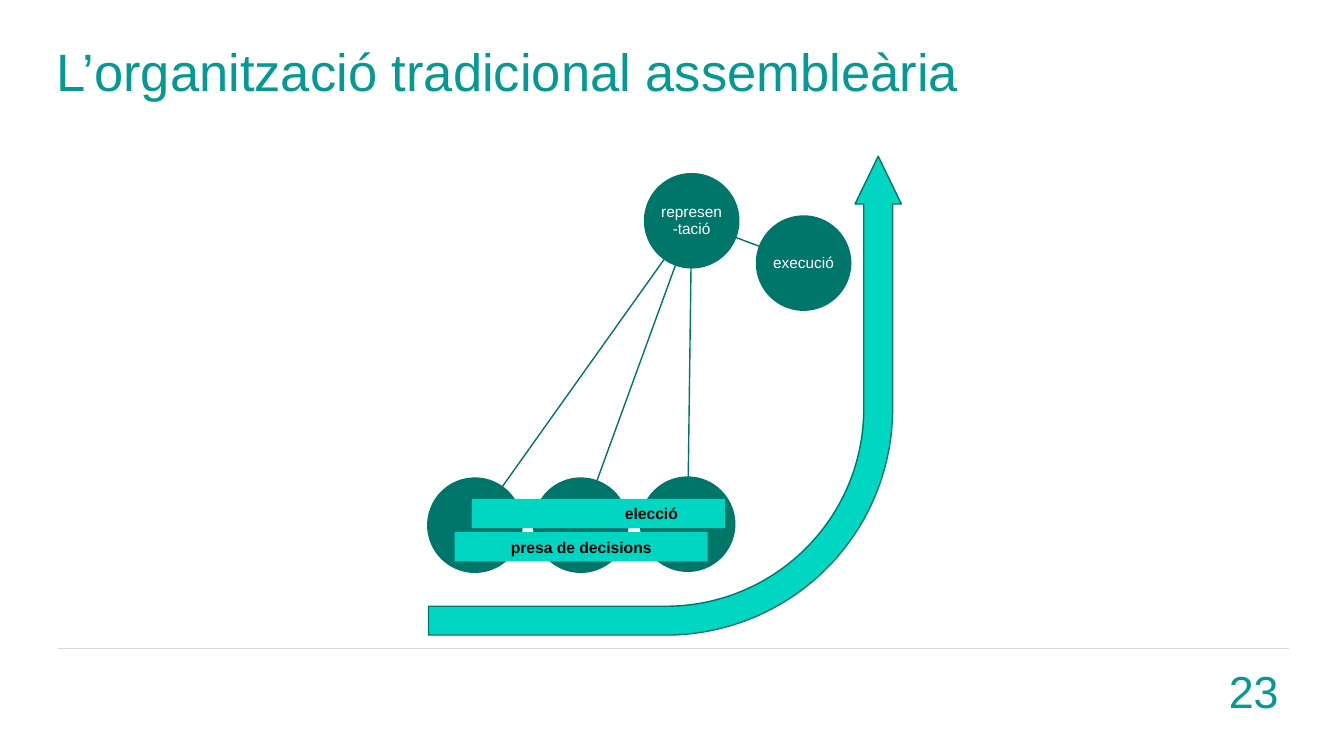
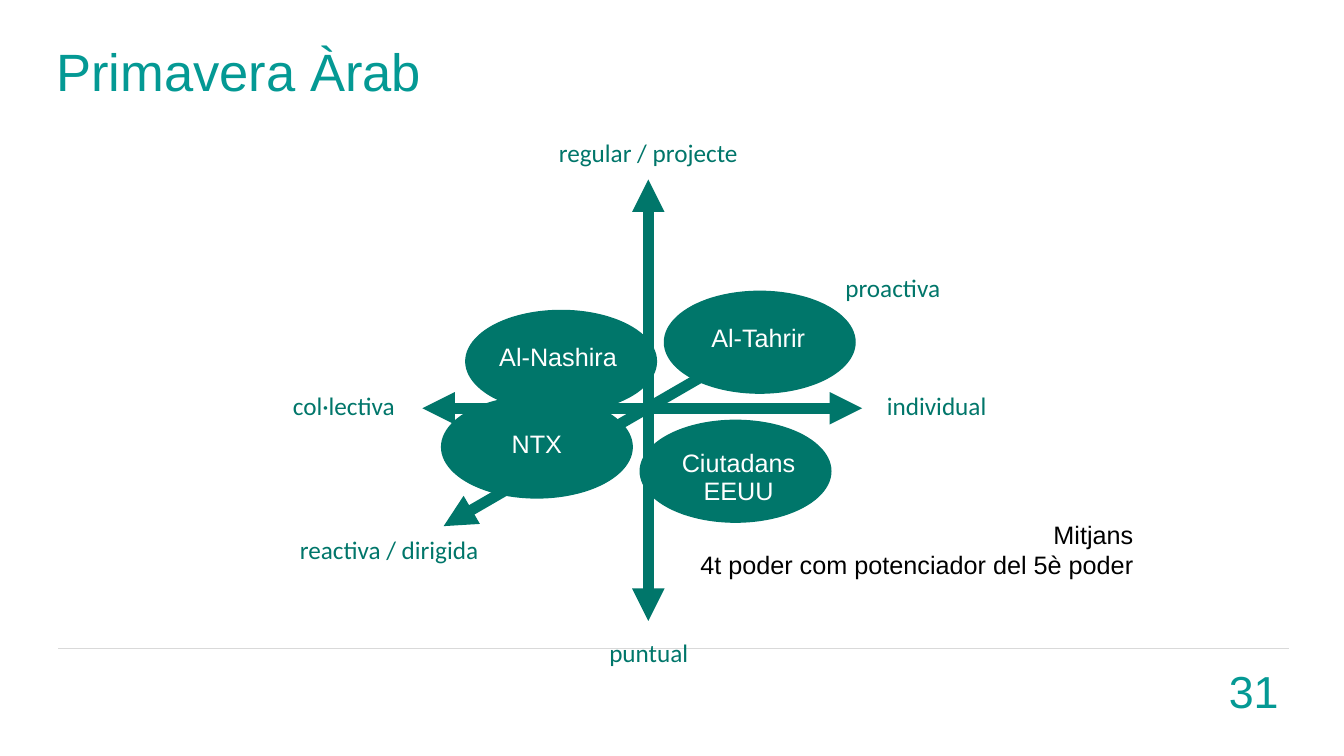
from math import hypot

from lxml.etree import SubElement
from pptx import Presentation
from pptx.dml.color import RGBColor
from pptx.enum.shapes import MSO_CONNECTOR, MSO_SHAPE
from pptx.enum.text import MSO_ANCHOR, PP_ALIGN
from pptx.oxml.ns import qn
from pptx.util import Emu, Pt

PX = 9144
BLACK = RGBColor(0x00, 0x00, 0x00)
WHITE = RGBColor(0xFF, 0xFF, 0xFF)
TEAL = RGBColor(0x04, 0x99, 0x94)
DARK = RGBColor(0x00, 0x76, 0x6A)
BRIGHT = RGBColor(0x00, 0xD6, 0xC2)
RULE = RGBColor(0xD9, 0xD9, 0xD9)

TITLE = {"name": "Arial", "size": Pt(37.5), "color": TEAL}
NUMBER = {"name": "Arial", "size": Pt(32), "color": TEAL}
ROLE = {"name": "Arial", "size": Pt(11), "color": WHITE}
BAR = {"name": "Arial", "size": Pt(11.2), "color": BLACK, "bold": True}
AXIS = {"name": "Calibri", "size": Pt(18), "color": DARK}
ACTOR = {"name": "Arial", "size": Pt(18), "color": WHITE}
NOTE = {"name": "Arial", "size": Pt(18), "color": BLACK}

DEFAULT_INSETS = (10, 5, 10, 5)
NO_INSETS = (0, 0, 0, 0)


def px(*lengths):
    return [Emu(round(length * PX)) for length in lengths]


class Slides:
    def __init__(self):
        self.deck = Presentation()
        self.deck.slide_width, self.deck.slide_height = px(1333, 750)
        self.page = None

    def start(self, title, number):
        self.page = self.deck.slides.add_slide(self.deck.slide_layouts[6])
        self.line((58, 643), (1278, 643), RULE, 0.5)
        self.text((46, 44, 1200, 59), [title], TITLE, align=PP_ALIGN.LEFT,
                  anchor=MSO_ANCHOR.MIDDLE, spacing=0.9)
        self.text((930, 665, 348, 40), [str(number)], NUMBER,
                  align=PP_ALIGN.RIGHT, anchor=MSO_ANCHOR.MIDDLE)

    def set_text(self, shape, lines, style, align=PP_ALIGN.CENTER,
                 anchor=MSO_ANCHOR.TOP, insets=DEFAULT_INSETS, spacing=1.0):
        frame = shape.text_frame
        frame.word_wrap = True
        frame.vertical_anchor = anchor
        for side, inset in zip(("left", "top", "right", "bottom"), px(*insets)):
            setattr(frame, f"margin_{side}", inset)
        for index, line in enumerate(lines):
            para = frame.add_paragraph() if index else frame.paragraphs[0]
            para.text = line
            para.alignment = align
            para.line_spacing = spacing
            for span in para.runs:
                for key, value in style.items():
                    if key == "color":
                        span.font.color.rgb = value
                    else:
                        setattr(span.font, key, value)

    def text(self, place, lines, style, **layout):
        box = self.page.shapes.add_textbox(*px(*place))
        self.set_text(box, lines, style, **layout)

    def shape(self, kind, place, fill, outline=None, width=1):
        shape = self.page.shapes.add_shape(kind, *px(*place))
        shape.shadow.inherit = False
        shape.fill.solid()
        shape.fill.fore_color.rgb = fill
        if outline is None:
            shape.line.fill.background()
        else:
            shape.line.color.rgb = outline
            shape.line.width = Pt(width)
        return shape

    def ellipse(self, place, label, style, width=1, insets=NO_INSETS):
        ellipse = self.shape(MSO_SHAPE.OVAL, place, DARK, DARK, width)
        if label:
            self.set_text(ellipse, [label], style, anchor=MSO_ANCHOR.MIDDLE,
                          insets=insets, spacing=0.9)

    def bar(self, place, label, insets=DEFAULT_INSETS):
        bar = self.shape(MSO_SHAPE.RECTANGLE, place, BRIGHT)
        self.set_text(bar, [label], BAR, anchor=MSO_ANCHOR.MIDDLE, insets=insets)

    def rising_arrow(self, place, adjustments):
        arrow = self.shape(MSO_SHAPE.BENT_ARROW, place, BRIGHT, DARK)
        arrow.rotation = 90
        for index, value in enumerate(adjustments):
            arrow.adjustments[index] = value
        arrow.element.spPr.find(qn("a:xfrm")).set("flipH", "1")

    def line(self, start, end, color, width, arrows=False):
        line = self.page.shapes.add_connector(
            MSO_CONNECTOR.STRAIGHT, *px(*start, *end))
        line.line.color.rgb = color
        line.line.width = Pt(width)
        properties = line.element.spPr
        if arrows:
            for tag in ("a:headEnd", "a:tailEnd"):
                SubElement(properties.find(qn("a:ln")), qn(tag), type="triangle")
        SubElement(properties, qn("a:effectLst"))

    def link(self, start, end, radius):
        across, down = end[0] - start[0], end[1] - start[1]
        share = radius / hypot(across, down)
        step = (across * share, down * share)
        self.line((start[0] + step[0], start[1] + step[1]),
                  (end[0] - step[0], end[1] - step[1]), DARK, 1)


def assembly_slide(slides):
    slides.start("L’organització tradicional assembleària", 23)
    slides.rising_arrow((422, 158, 475, 469), (0.061, 0.049, 0.101, 0.479))
    radius = 46
    top = (686, 219)
    others = [((797, 261), "execució"), ((682, 520), ""),
              ((576, 521), ""), ((471, 521), "")]
    for center, _ in others:
        slides.link(top, center, radius)
    for (x, y), label in [(top, "represen-tació"), *others]:
        slides.ellipse((x - radius, y - radius, 2 * radius, 2 * radius),
                       label, ROLE, width=2)
    slides.bar((468, 495, 251, 29), "elecció", insets=(115, 5, 10, 5))
    slides.bar((451, 528, 251, 29), "presa de decisions")


def spring_slide(slides):
    slides.start("Primavera Àrab", 31)
    for place, label in [
        ((537, 627, 213, 40), "puntual"),
        ((257, 382, 168, 40), "col·lectiva"),
        ((528, 131, 230, 40), "regular / projecte"),
        ((858, 382, 142, 40), "individual"),
        ((271, 525, 230, 40), "reactiva / dirigida"),
        ((787, 265, 197, 40), "proactiva"),
    ]:
        slides.text(place, [label], AXIS)
    for start, end in [((643, 616), (643, 178)),
                       ((419, 405), (855, 405)),
                       ((440, 522), (818, 303))]:
        slides.line(start, end, DARK, 7.75, arrows=True)
    for x, y, label, insets in [
        (635, 417, "Ciutadans\vEEUU", (6, 14, 0, 0)),
        (462, 308, "Al-Nashira", (0, 0, 6, 6)),
        (659, 289, "Al-Tahrir", (0, 0, 3, 5)),
        (438, 393, "NTX", (0, 0, 0, 3)),
    ]:
        slides.ellipse((x, y, 189, 101), label, ACTOR, insets=insets)
    slides.text((667, 486, 463, 95),
                ["Mitjans", "4t poder com potenciador del 5è poder"], NOTE,
                align=PP_ALIGN.RIGHT, anchor=MSO_ANCHOR.BOTTOM,
                insets=(6, 6, 6, 6))


def main():
    slides = Slides()
    assembly_slide(slides)
    spring_slide(slides)
    slides.deck.save("out.pptx")


if __name__ == "__main__":
    main()
